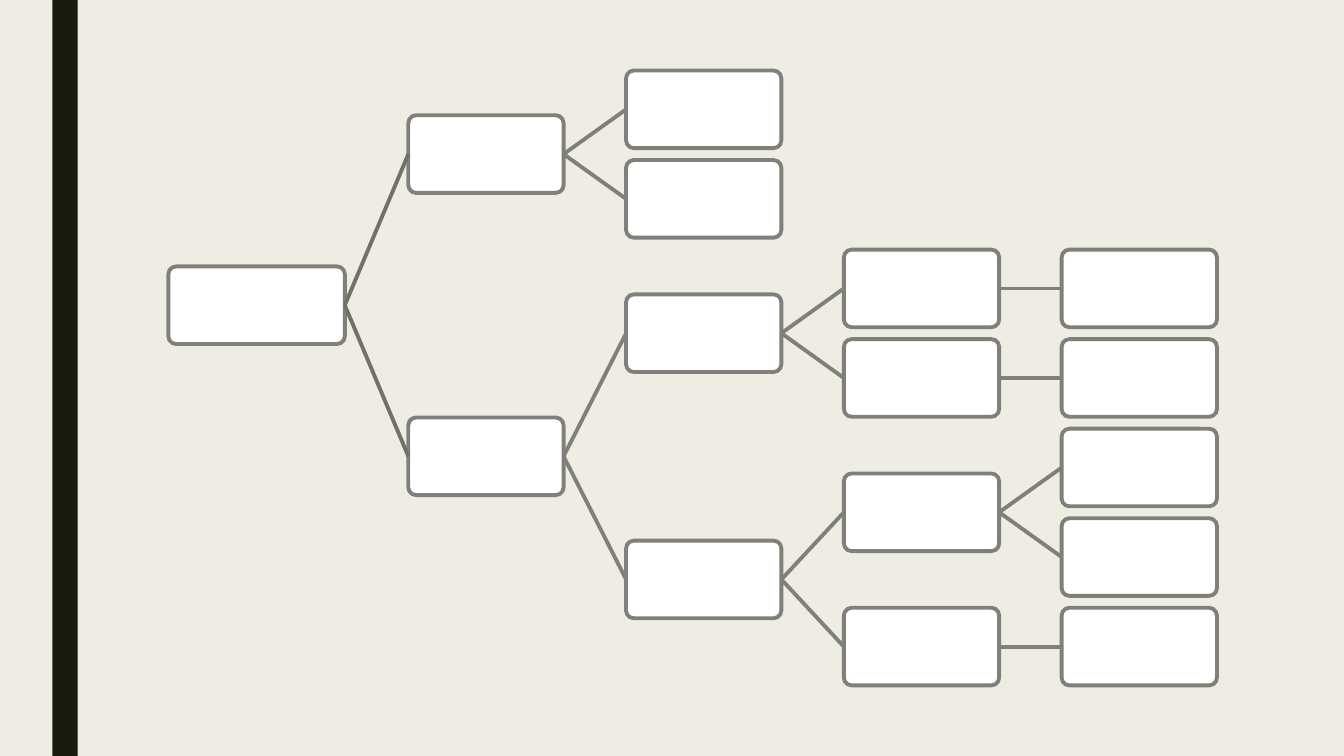
from dataclasses import dataclass
from itertools import count
from typing import Iterator

from lxml.etree import SubElement
from pptx import Presentation
from pptx.dml.color import RGBColor
from pptx.enum.shapes import MSO_CONNECTOR, MSO_SHAPE
from pptx.oxml.ns import qn
from pptx.shapes.autoshape import Shape
from pptx.slide import Slide
from pptx.util import Inches, Pt

CREAM = RGBColor(0xEF, 0xED, 0xE3)
DARK_OLIVE = RGBColor(0x19, 0x1B, 0x0E)
WHITE = RGBColor(0xFF, 0xFF, 0xFF)
GREY = RGBColor(0x7F, 0x80, 0x7A)
DARK_GREY = RGBColor(0x70, 0x71, 0x6B)

OUTLINE = Pt(2.75)
BOX_HEIGHT = 0.77
ROOT_LEFT, ROOT_WIDTH = 1.67, 1.75
LEVEL_LEFT, BOX_WIDTH, LEVEL_GAP = 4.05, 1.54, 0.62
FIRST_LEAF_TOP, LAST_LEAF_TOP, LEAF_COUNT = 0.7, 6.03, 7
LEAF_STEP = (LAST_LEAF_TOP - FIRST_LEAF_TOP) / (LEAF_COUNT - 1)

RIGHT_SIDE, LEFT_SIDE = 3, 1


@dataclass(frozen=True)
class Node:
    children: tuple["Node", ...] = ()


LEAF = Node()
PAIR = Node((LEAF, LEAF))
SINGLE = Node((LEAF,))
ROOT = Node((PAIR, Node((Node((SINGLE, SINGLE)), Node((PAIR, SINGLE))))))


def draw_box(slide: Slide, level: int, top: float) -> Shape:
    if level == 0:
        left, width = ROOT_LEFT, ROOT_WIDTH
    else:
        left = LEVEL_LEFT + (level - 1) * (BOX_WIDTH + LEVEL_GAP)
        width = BOX_WIDTH
    box = slide.shapes.add_shape(
        MSO_SHAPE.ROUNDED_RECTANGLE,
        Inches(left), Inches(top), Inches(width), Inches(BOX_HEIGHT),
    )
    box.adjustments[0] = 0.1
    box.shadow.inherit = False
    box.fill.solid()
    box.fill.fore_color.rgb = WHITE
    box.line.color.rgb = GREY
    box.line.width = OUTLINE
    return box


def draw_branch(slide: Slide, parent: Shape, child: Shape, color: RGBColor) -> None:
    branch = slide.shapes.add_connector(MSO_CONNECTOR.STRAIGHT, 0, 0, 0, 0)
    branch.begin_connect(parent, RIGHT_SIDE)
    branch.end_connect(child, LEFT_SIDE)
    branch.line.color.rgb = color
    branch.line.width = OUTLINE
    SubElement(branch._element.spPr, qn("a:effectLst"))


def draw_tree(slide: Slide, node: Node, leaf_rows: Iterator[int],
              level: int = 0) -> tuple[Shape, float]:
    """Draw a node and its subtree; return its box and top in inches."""
    drawn = [draw_tree(slide, child, leaf_rows, level + 1) for child in node.children]
    if drawn:
        # A parent sits midway between its children
        top = sum(child_top for _, child_top in drawn) / len(drawn)
    else:
        top = FIRST_LEAF_TOP + next(leaf_rows) * LEAF_STEP
    box = draw_box(slide, level, top)
    for child_box, _ in drawn:
        draw_branch(slide, box, child_box, DARK_GREY if level == 0 else GREY)
    return box, top


def main() -> None:
    deck = Presentation()
    deck.slide_width, deck.slide_height = Inches(13.33), Inches(7.5)
    slide = deck.slides.add_slide(deck.slide_layouts[6])

    # Background and side bar
    slide.background.fill.solid()
    slide.background.fill.fore_color.rgb = CREAM
    side_bar = slide.shapes.add_shape(
        MSO_SHAPE.RECTANGLE, Inches(0.52), 0, Inches(0.25), deck.slide_height
    )
    side_bar.shadow.inherit = False
    side_bar.fill.solid()
    side_bar.fill.fore_color.rgb = DARK_OLIVE
    side_bar.line.fill.background()

    # Tree of empty boxes
    draw_tree(slide, ROOT, count())

    deck.save("out.pptx")


if __name__ == "__main__":
    main()
